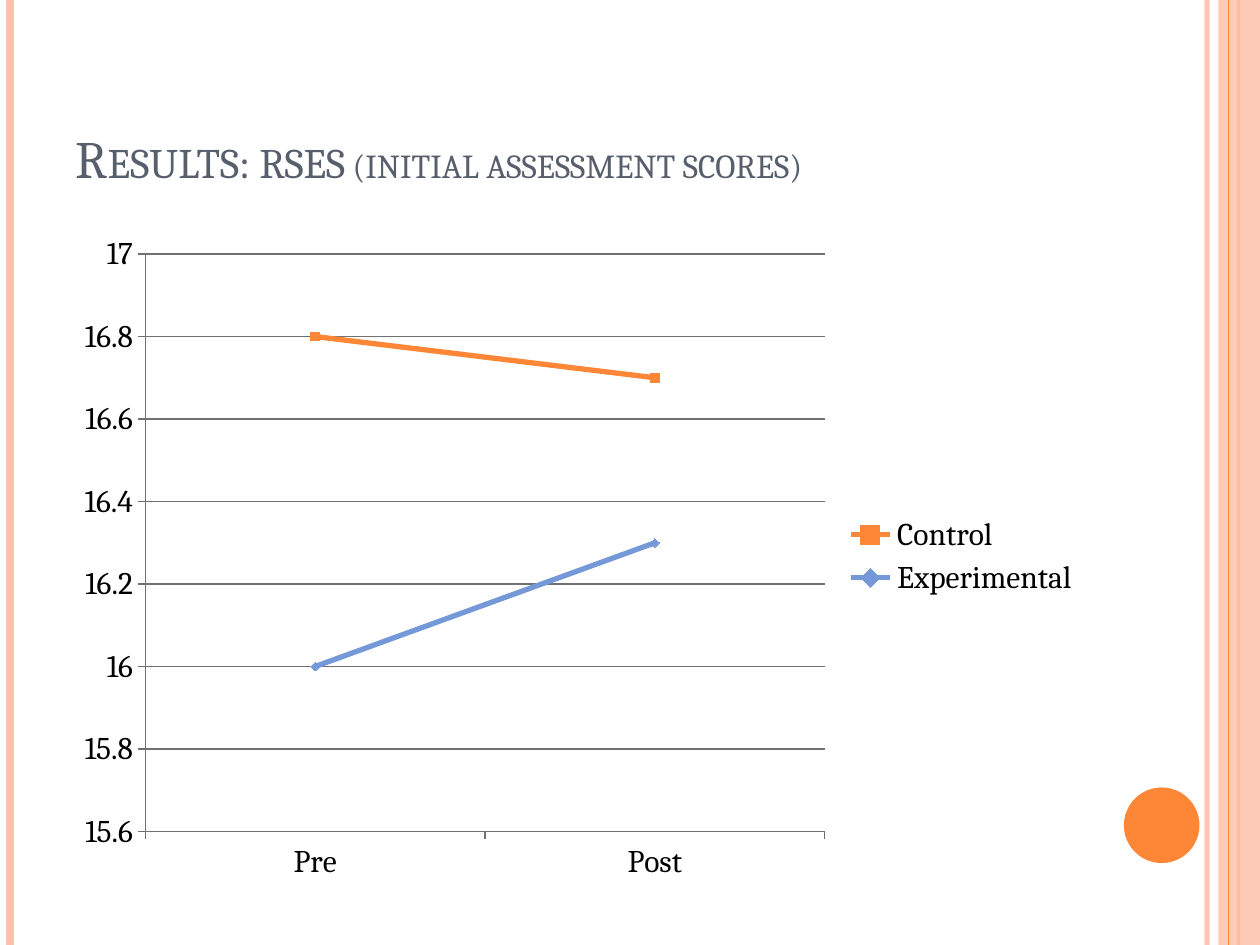
from pptx import Presentation
from pptx.chart.data import CategoryChartData
from pptx.dml.color import RGBColor
from pptx.enum.chart import XL_CHART_TYPE, XL_LEGEND_POSITION, XL_MARKER_STYLE, XL_TICK_MARK
from pptx.enum.shapes import MSO_CONNECTOR, MSO_SHAPE
from pptx.enum.text import MSO_ANCHOR, PP_ALIGN
from pptx.oxml import parse_xml
from pptx.oxml.ns import nsdecls, qn
from pptx.util import Inches, Pt
from lxml import etree

ORANGE = RGBColor(0xFE, 0x86, 0x37)
PEACH = RGBColor(0xFE, 0xC3, 0xAE)
BLUE = RGBColor(0x75, 0x98, 0xD9)
SLATE = RGBColor(0x57, 0x5F, 0x6D)
GREY = RGBColor(0x70, 0x70, 0x70)
BLACK = RGBColor(0, 0, 0)
LINE_MARKERS = XL_CHART_TYPE.LINE_MARKERS
SQUARE, DIAMOND = XL_MARKER_STYLE.SQUARE, XL_MARKER_STYLE.DIAMOND
RIGHT, OUTSIDE = XL_LEGEND_POSITION.RIGHT, XL_TICK_MARK.OUTSIDE
RECT, OVAL = MSO_SHAPE.RECTANGLE, MSO_SHAPE.OVAL
STRAIGHT = MSO_CONNECTOR.STRAIGHT
BOTTOM, LEFT = MSO_ANCHOR.BOTTOM, PP_ALIGN.LEFT
FONT = "Cambria"
WIDTH, HEIGHT = 10, 7.5
MARGIN, CONTENT_W = 0.5, 8.17


def set_alpha(fill_owner, percent):
    """Make the solid colour below an element partly transparent."""
    color = next(fill_owner.iter(qn("a:srgbClr")))
    etree.SubElement(color, qn("a:alpha")).set("val", str(percent * 1000))


def add_text(p, text, size, color, small_caps=False):
    """Add a formatted run to a paragraph."""
    r = p.add_run()
    r.text = text
    r.font.name, r.font.size = FONT, Pt(size)
    r.font.color.rgb = color
    if small_caps:
        r.font._element.set("cap", "small")


class SlideBuilder:
    """Holds the style and the current slide."""

    def __init__(self, prs):
        """Start a title-only slide."""
        self.s = prs.slides.add_slide(prs.slide_layouts[5])

    def rule(self, x, width, color, alpha=100):
        """Draw a vertical line over the full slide height."""
        line = self.s.shapes.add_connector(
            STRAIGHT, Inches(x), 0, Inches(x), Inches(HEIGHT))
        line.line.color.rgb, line.line.width = color, Pt(width)
        if alpha < 100:
            set_alpha(line.line._get_or_add_ln(), alpha)
        etree.SubElement(line._element.spPr, qn("a:effectLst"))

    def shape(self, kind, box, color, alpha=100):
        """Draw a filled shape without outline."""
        sp = self.s.shapes.add_shape(kind, *map(Inches, box))
        sp.shadow.inherit = False
        sp.fill.solid()
        sp.fill.fore_color.rgb = color
        sp.line.fill.background()
        if alpha < 100:
            set_alpha(sp._element.spPr, alpha)

    def title(self, box, parts):
        """Fill the title placeholder with (text, size) parts."""
        sp = self.s.shapes.title
        sp.left, sp.top, sp.width, sp.height = map(Inches, box)
        tf = sp.text_frame
        tf.word_wrap, tf.vertical_anchor = True, BOTTOM
        p = tf.paragraphs[0]
        p.alignment = LEFT
        for text, size in parts:
            add_text(p, text, size, SLATE, small_caps=True)

    def line_chart(self, box, categories, series, plot_area):
        """Add a line chart from (name, values, colour, marker) series."""
        data = CategoryChartData()
        data.categories = categories
        for name, values, _, _ in series:
            data.add_series(name, values)
        chart = self.s.shapes.add_chart(LINE_MARKERS, *map(Inches, box), data).chart
        chart.has_title = False
        chart.font.name, chart.font.size = FONT, Pt(18)
        chart.font.color.rgb = BLACK
        chart.has_legend = True
        chart.legend.position, chart.legend.include_in_layout = RIGHT, False
        chart.plots[0].vary_by_categories = False
        for line, (_, _, color, marker) in zip(chart.plots[0].series, series):
            line.smooth = False
            line.format.line.color.rgb, line.format.line.width = color, Pt(3)
            line.marker.style, line.marker.size = marker, 5
            line.marker.format.fill.solid()
            line.marker.format.fill.fore_color.rgb = color
            line.marker.format.line.color.rgb = color
        axis = chart.value_axis
        axis.minimum_scale, axis.maximum_scale, axis.major_unit = 15.6, 17, 0.2
        axis.tick_labels.number_format = "General"
        axis.tick_labels.number_format_is_linked = False
        axis.has_major_gridlines = True
        for item in (axis, chart.category_axis, axis.major_gridlines):
            item.format.line.color.rgb, item.format.line.width = GREY, Pt(0.75)
        for item in (axis, chart.category_axis):
            item.major_tick_mark = OUTSIDE
        self.place_plot(chart, plot_area)

    def place_plot(self, chart, plot_area):
        """Fix the inner plot area as shares of the chart's size."""
        modes = "".join(f'<c:{m} val="edge"/>' for m in ("xMode", "yMode"))
        sizes = "".join(f'<c:{k} val="{v}"/>' for k, v in zip("xywh", plot_area))
        area = chart._chartSpace.chart.plotArea
        for old in area.findall(qn("c:layout")):
            area.remove(old)
        area.insert(0, parse_xml(
            f'<c:layout {nsdecls("c")}><c:manualLayout><c:layoutTarget val="inner"/>'
            f'{modes}{sizes}</c:manualLayout></c:layout>'))


def main():
    """Build the results slide."""
    prs = Presentation()
    prs.slide_width, prs.slide_height = Inches(WIDTH), Inches(HEIGHT)
    slide = SlideBuilder(prs)
    slide.rule(9.58, 3, PEACH, alpha=93)
    slide.rule(0.08, 4.5, PEACH)
    slide.rule(9.83, 1.5, ORANGE)
    slide.shape(RECT, (9.67, 0, WIDTH - 9.67, HEIGHT), PEACH, alpha=87)
    slide.rule(9.75, 0.75, ORANGE)
    slide.shape(OVAL, (8.92, 6.25, 0.6, 0.6), ORANGE)
    slide.title((MARGIN, 0.3, CONTENT_W, 1.25),
                [("Results: rses", 30), (" (initial assessment scores)", 24)])
    slide.line_chart(
        (MARGIN, 1.75, CONTENT_W, 5.33), ("Pre", "Post"),
        [("Control", (16.8, 16.7), ORANGE, SQUARE),
         ("Experimental", (16, 16.3), BLUE, DIAMOND)],
        plot_area=(0.08, 0.05, 0.66, 0.86))
    prs.save("out.pptx")


if __name__ == "__main__":
    main()
